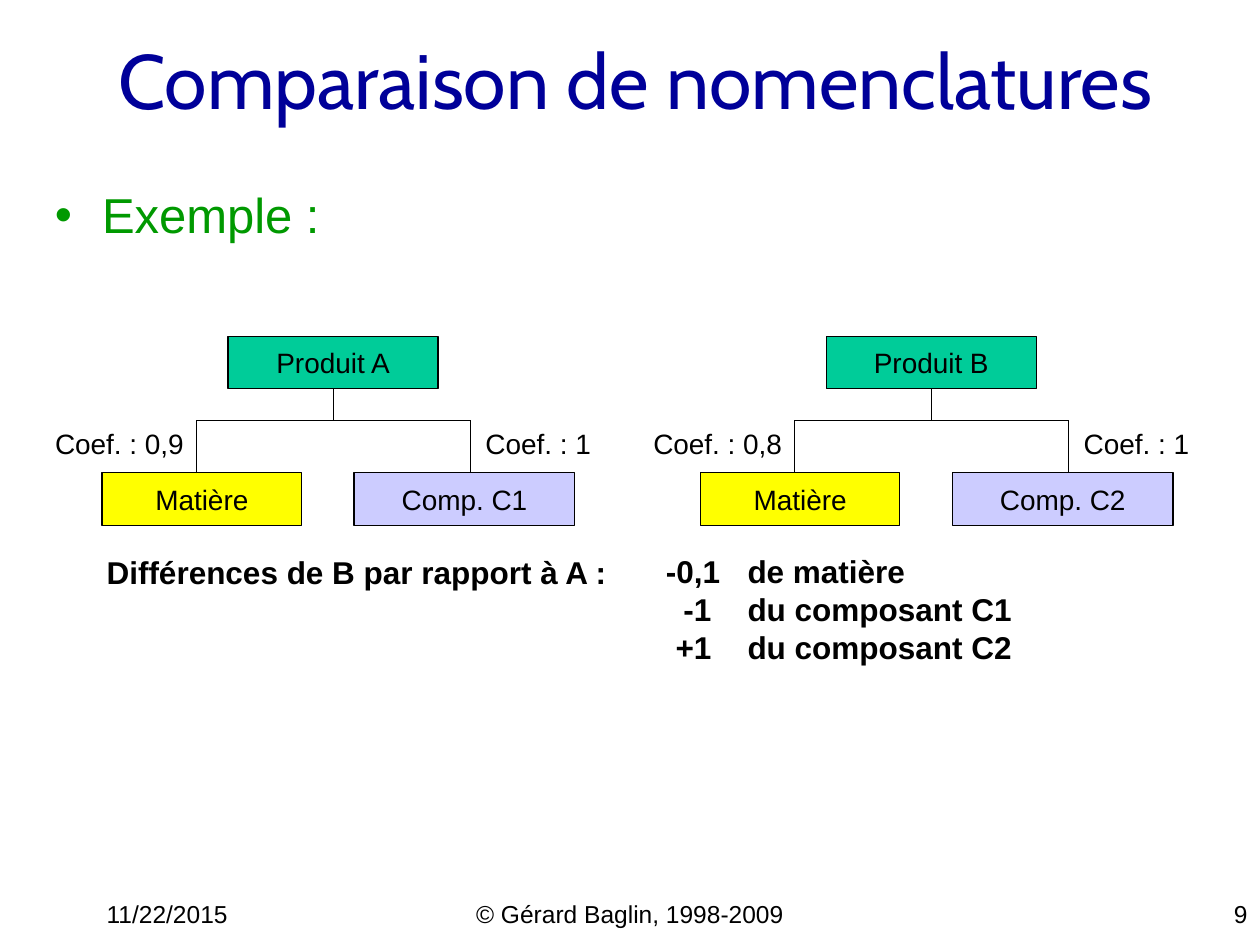
from lxml.etree import SubElement
from pptx import Presentation
from pptx.dml.color import RGBColor
from pptx.enum.shapes import MSO_CONNECTOR, MSO_SHAPE
from pptx.enum.text import MSO_ANCHOR, MSO_AUTO_SIZE, PP_ALIGN
from pptx.oxml.ns import qn
from pptx.util import Cm, Pt


def color(value):
    return RGBColor.from_string(value)


def write(shape, lines, place, size, align, anchor=MSO_ANCHOR.MIDDLE,
          wrap=False, bold=False, font="Arial", ink="000000"):
    shape.left, shape.top, shape.width, shape.height = map(Cm, place)
    frame = shape.text_frame
    frame.text = "\n".join(lines)
    frame.auto_size = MSO_AUTO_SIZE.NONE
    frame.word_wrap = wrap
    frame.vertical_anchor = anchor
    for paragraph in frame.paragraphs:
        paragraph.alignment = align
        paragraph.font.name = font
        paragraph.font.size = Pt(size)
        paragraph.font.bold = bold
        paragraph.font.color.rgb = color(ink)


presentation = Presentation()
presentation.slide_width = Cm(25.4)
presentation.slide_height = Cm(19.05)
slide = presentation.slides.add_slide(presentation.slide_layouts[1])
shapes = slide.shapes

write(shapes.title, ["Comparaison de nomenclatures"], (0, 0, 23.5, 3.18), 44,
      PP_ALIGN.RIGHT, wrap=True, font="Cabin", ink="000099")
write(slide.placeholders[1], ["Exemple :"], (0.85, 3.6, 23.28, 1.9), 28,
      PP_ALIGN.LEFT, MSO_ANCHOR.TOP, wrap=True, ink="009900")

footers = [
    ("11/22/2015", 1.9, 5.29, PP_ALIGN.LEFT),
    ("© Gérard Baglin, 1998-2009", 8.68, 8.04, PP_ALIGN.CENTER),
    ("9", 20.11, 5.29, PP_ALIGN.RIGHT),
]
for text, left, width, align in footers:
    write(shapes.add_textbox(0, 0, 0, 0), [text], (left, 17.99, width, 0.64),
          14, align, MSO_ANCHOR.TOP, wrap=True)

tree_pitch = 12.06
trees = [("Produit A", "Comp. C1", "Coef. : 0,9"),
         ("Produit B", "Comp. C2", "Coef. : 0,8")]
material_x, product_x, component_x = 3.96, 6.72, 9.48
product_bottom, branch_y, part_top = 7.84, 8.47, 9.53

for index, (product, component, material_ratio) in enumerate(trees):
    offset = index * tree_pitch
    boxes = [
        (product, 4.6, 6.78, 4.23, "00CC99"),
        ("Matière", 2.06, part_top, 4.02, "FFFF00"),
        (component, 7.14, part_top, 4.45, "CCCCFF"),
    ]
    for text, left, top, width, fill in boxes:
        box = shapes.add_shape(MSO_SHAPE.RECTANGLE, 0, 0, 0, 0)
        box.shadow.inherit = False
        box.fill.solid()
        box.fill.fore_color.rgb = color(fill)
        box.line.color.rgb = color("000000")
        box.line.width = Pt(0.75)
        write(box, [text], (left + offset, top, width, 1.06), 16,
              PP_ALIGN.CENTER)

    branches = [
        (material_x, branch_y, component_x, branch_y),
        (product_x, product_bottom, product_x, branch_y),
        (material_x, branch_y, material_x, part_top),
        (component_x, branch_y, component_x, part_top),
    ]
    for start_x, start_y, end_x, end_y in branches:
        line = shapes.add_connector(
            MSO_CONNECTOR.STRAIGHT, Cm(start_x + offset), Cm(start_y),
            Cm(end_x + offset), Cm(end_y))
        line.line.color.rgb = color("000000")
        line.line.width = Pt(0.75)
        SubElement(line._element.spPr, qn("a:effectLst"))

    for text, left, width in [(material_ratio, 0.85, 3.12),
                              ("Coef. : 1", 9.53, 2.64)]:
        write(shapes.add_textbox(0, 0, 0, 0), [text],
              (left + offset, branch_y, width, 0.94), 16, PP_ALIGN.CENTER)

write(shapes.add_textbox(0, 0, 0, 0), ["Différences de B par rapport à A :"],
      (1.9, 11.01, 10.64, 1.02), 18, PP_ALIGN.LEFT, bold=True)

differences = shapes.add_textbox(0, 0, 0, 0)
write(differences,
      ["\t-0,1\tde matière", "\t-1 \tdu composant C1", "\t+1 \tdu composant C2"],
      (12.7, 11.01, 7.95, 2.54), 18, PP_ALIGN.LEFT, bold=True)
for paragraph in differences.text_frame.paragraphs:
    properties = paragraph._p.get_or_add_pPr()
    tab_list = properties.makeelement(qn("a:tabLst"))
    properties.insert(0, tab_list)
    for position, side in [(1.57, "r"), (2.12, "l")]:
        SubElement(tab_list, qn("a:tab"), pos=str(Cm(position)), algn=side)

presentation.save("out.pptx")
